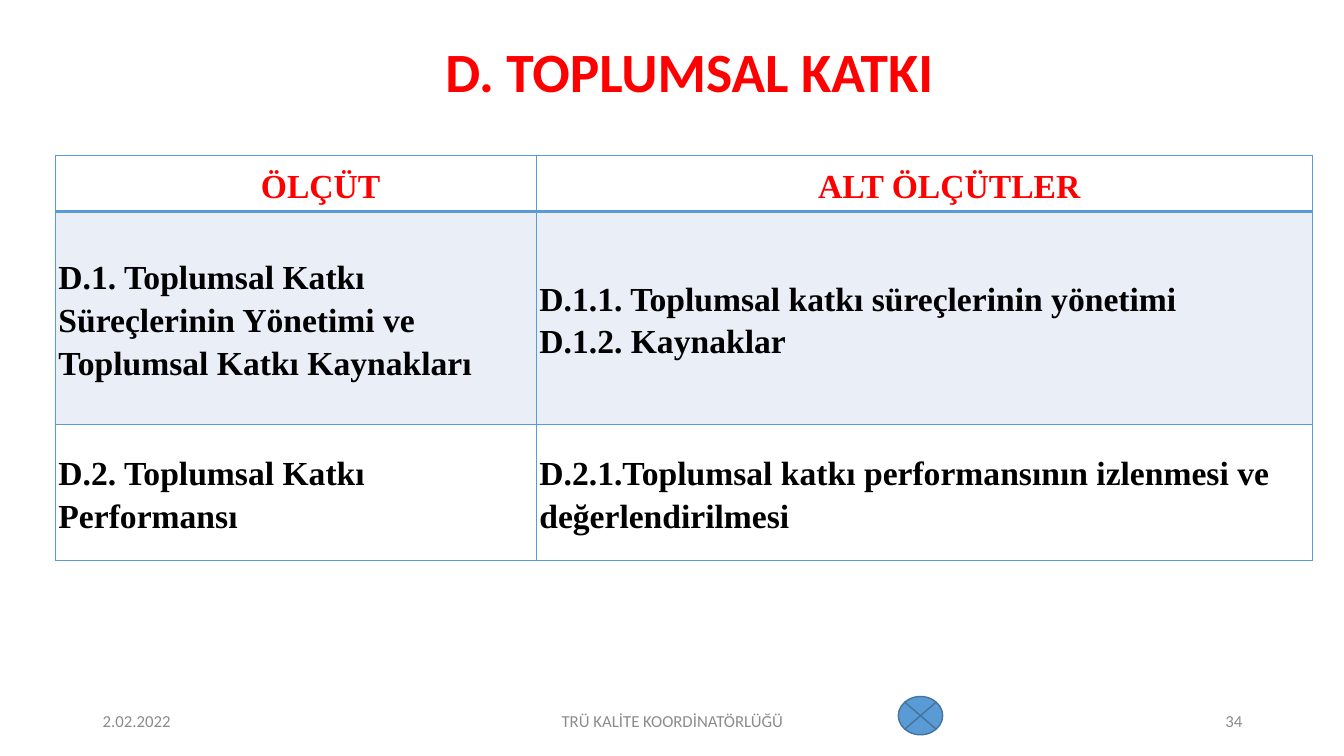
from lxml.etree import SubElement
from pptx import Presentation
from pptx.dml.color import RGBColor
from pptx.enum.shapes import MSO_SHAPE
from pptx.enum.text import MSO_ANCHOR, MSO_AUTO_SIZE, PP_ALIGN
from pptx.oxml.ns import qn
from pptx.util import Inches, Pt

TITLE = "D. TOPLUMSAL KATKI "
CRITERIA = [
    ("ÖLÇÜT", "ALT ÖLÇÜTLER"),
    ("D.1. Toplumsal Katkı Süreçlerinin Yönetimi ve Toplumsal Katkı Kaynakları",
     "D.1.1. Toplumsal katkı süreçlerinin yönetimi\nD.1.2. Kaynaklar"),
    ("D.2. Toplumsal Katkı Performansı",
     "D.2.1.Toplumsal katkı performansının izlenmesi ve değerlendirilmesi"),
]
COLUMN_WIDTHS = (4.77, 7.7)
ROW_HEIGHTS = (0.56, 2.11, 1.35)
FOOTER = [  # text, left, width, alignment
    ("2.02.2022", 0.92, 3, PP_ALIGN.LEFT),
    ("TRÜ KALİTE KOORDİNATÖRLÜĞÜ", 4.42, 4.5, PP_ALIGN.CENTER),
    ("34", 9.42, 3, PP_ALIGN.RIGHT),
]
RED, BLACK, GREY = "FF0000", "000000", "8C8C8C"
BLUE, DARK_BLUE, BAND = "5B9BD5", "43739E", "EAEFF7"


def rgb(value):
    return RGBColor.from_string(value)


def box(*lengths):
    return [Inches(length) for length in lengths]


def style(paragraph, font_name, size, color, bold=False):
    for run in paragraph.runs:
        font = run.font
        font.name, font.size, font.bold = font_name, Pt(size), bold
        font.color.rgb = rgb(color)


def add_border(cell, side, width):
    line = SubElement(cell._tc.get_or_add_tcPr(), qn(f"a:ln{side}"), w=str(Pt(width)))
    fill = SubElement(line, qn("a:solidFill"))
    SubElement(fill, qn("a:srgbClr"), val=BLUE)


def fill_cell(cell, content, row):
    header = row == 0
    cell.text = content
    cell.vertical_anchor = MSO_ANCHOR.MIDDLE
    cell.margin_left = cell.margin_right = Inches(0.03)
    cell.margin_top, cell.margin_bottom = Inches(0.01), 0
    for paragraph in cell.text_frame.paragraphs:
        paragraph.line_spacing = 1.15
        if header:
            paragraph.alignment = PP_ALIGN.CENTER
            paragraph._p.get_or_add_pPr().set("indent", str(Inches(0.49)))
        style(paragraph, "Times New Roman", 24, RED if header else BLACK, True)
    for side in "LRTB":
        under_header = (row, side) in ((0, "B"), (1, "T"))
        add_border(cell, side, 2.25 if under_header else 1)
    if row == 1:
        cell.fill.solid()
        cell.fill.fore_color.rgb = rgb(BAND)
    else:
        cell.fill.background()


def add_criteria_table(slide):
    table = slide.shapes.add_table(
        len(ROW_HEIGHTS), len(COLUMN_WIDTHS),
        *box(0.55, 1.54, sum(COLUMN_WIDTHS), sum(ROW_HEIGHTS))).table
    table.horz_banding = False
    for column, width in zip(table.columns, COLUMN_WIDTHS):
        column.width = Inches(width)
    for row, height in enumerate(ROW_HEIGHTS):
        table.rows[row].height = Inches(height)
        for column, content in enumerate(CRITERIA[row]):
            fill_cell(table.cell(row, column), content, row)


def main():
    deck = Presentation()
    deck.slide_width, deck.slide_height = box(13.33, 7.5)
    slide = deck.slides.add_slide(deck.slide_layouts[5])

    title = slide.shapes.title
    title.left, title.top, title.width, title.height = box(1.38, 0.4, 11.04, 0.67)
    title.text_frame.text = TITLE
    title.text_frame.auto_size = MSO_AUTO_SIZE.NONE
    title.text_frame.vertical_anchor = MSO_ANCHOR.MIDDLE
    heading = title.text_frame.paragraphs[0]
    heading.alignment, heading.line_spacing = PP_ALIGN.CENTER, 0.9
    style(heading, "Calibri", 39.6, RED, True)

    for content, left, width, alignment in FOOTER:
        frame = slide.shapes.add_textbox(*box(left, 6.95, width, 0.4)).text_frame
        frame.word_wrap = True
        frame.vertical_anchor = MSO_ANCHOR.MIDDLE
        frame.text = content
        frame.paragraphs[0].alignment = alignment
        style(frame.paragraphs[0], "Calibri", 12, GREY)

    add_criteria_table(slide)

    junction = slide.shapes.add_shape(
        MSO_SHAPE.FLOWCHART_SUMMING_JUNCTION, *box(8.91, 6.91, 0.44, 0.38))
    junction.shadow.inherit = False
    junction.fill.solid()
    junction.fill.fore_color.rgb = rgb(BLUE)
    junction.line.color.rgb = rgb(DARK_BLUE)
    junction.line.width = Pt(1)

    deck.save("out.pptx")


if __name__ == "__main__":
    main()
